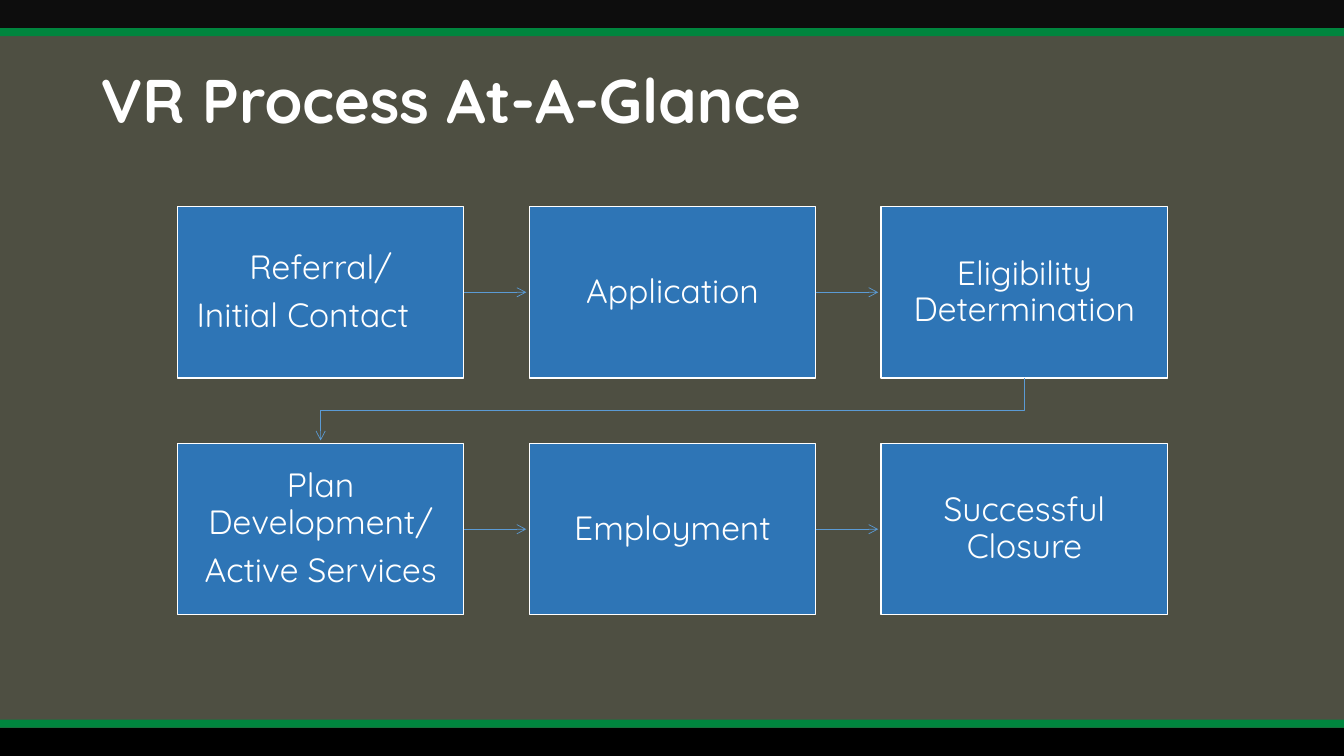
from pptx import Presentation
from pptx.dml.color import RGBColor
from pptx.enum.shapes import MSO_CONNECTOR, MSO_SHAPE
from pptx.enum.text import MSO_ANCHOR, PP_ALIGN
from pptx.oxml.ns import qn
from pptx.util import Inches, Pt
from lxml.etree import SubElement

FONT = "Quicksand"
OLIVE = RGBColor(0x4E, 0x4F, 0x42)
BLACK = RGBColor(0x00, 0x00, 0x00)
NEAR_BLACK = RGBColor(0x0D, 0x0D, 0x0D)
GREEN = RGBColor(0x00, 0x85, 0x3E)
BLUE = RGBColor(0x2E, 0x75, 0xB6)
LIGHT_BLUE = RGBColor(0x5B, 0x9B, 0xD5)
WHITE = RGBColor(0xFF, 0xFF, 0xFF)

WIDTH, HEIGHT = 13.33, 7.5
BAND, STRIPE = 0.28, 0.08

COLUMNS = 3
STEP_W, STEP_H = 2.84, 1.7
PITCH_X, PITCH_Y = 3.49, 2.35
ARROW_GAP = 0.03

STEPS = [
    ["Referral/", "Initial Contact\t"],
    ["Application"],
    ["Eligibility Determination"],
    ["Plan Development/", "Active Services"],
    ["Employment"],
    ["Successful Closure"],
]


def add_bar(slide, top, height, color):
    bar = slide.shapes.add_shape(
        MSO_SHAPE.RECTANGLE, 0, Inches(top), Inches(WIDTH), Inches(height))
    bar.shadow.inherit = False
    bar.fill.solid()
    bar.fill.fore_color.rgb = color
    bar.line.fill.background()


def add_frame(slide):
    """Dark bands with green stripes along the top and bottom edges."""
    add_bar(slide, HEIGHT - BAND, BAND, BLACK)
    add_bar(slide, HEIGHT - BAND - STRIPE, STRIPE, GREEN)
    add_bar(slide, 0, BAND, NEAR_BLACK)
    add_bar(slide, BAND, STRIPE, GREEN)


def add_title(slide, left, top, width, height):
    title = slide.shapes.add_textbox(
        Inches(left), Inches(top), Inches(width), Inches(height))
    frame = title.text_frame
    frame.word_wrap = True
    frame.vertical_anchor = MSO_ANCHOR.MIDDLE
    heading = frame.paragraphs[0]
    heading.text = "VR Process At-A-Glance"
    heading.line_spacing = 0.9
    heading.font.name = FONT
    heading.font.size = Pt(44)
    heading.font.bold = True
    heading.font.color.rgb = WHITE


def add_step(slide, left, top, lines):
    step = slide.shapes.add_shape(
        MSO_SHAPE.RECTANGLE, Inches(left), Inches(top), Inches(STEP_W), Inches(STEP_H))
    step.shadow.inherit = False
    step.fill.solid()
    step.fill.fore_color.rgb = BLUE
    step.line.color.rgb = WHITE
    step.line.width = Pt(1)
    frame = step.text_frame
    frame.word_wrap = True
    frame.vertical_anchor = MSO_ANCHOR.MIDDLE
    frame.margin_left = frame.margin_right = Inches(0.19)
    frame.margin_top = frame.margin_bottom = Inches(0.19)
    for index, line in enumerate(lines):
        paragraph = frame.add_paragraph() if index else frame.paragraphs[0]
        paragraph.text = line
        paragraph.alignment = PP_ALIGN.CENTER
        paragraph.line_spacing = 0.9
        paragraph.space_after = Pt(8.4)
        paragraph.font.name = FONT
        paragraph.font.size = Pt(24)
        paragraph.font.color.rgb = WHITE
    return step


def style_arrow(arrow):
    arrow.line.color.rgb = LIGHT_BLUE
    arrow.line.width = Pt(0.5)
    properties = arrow.element.spPr
    SubElement(properties.find(qn("a:ln")), qn("a:tailEnd"), type="arrow")


def add_arrow_across(slide, start, end):
    middle = start.top + start.height // 2
    arrow = slide.shapes.add_connector(
        MSO_CONNECTOR.STRAIGHT, start.left + start.width, middle,
        end.left - Inches(ARROW_GAP), middle)
    arrow.begin_connect(start, 3)
    style_arrow(arrow)
    SubElement(arrow.element.spPr, qn("a:effectLst"))


def add_arrow_to_next_row(slide, start, end):
    start_x = start.left + start.width // 2
    end_x = end.left + end.width // 2
    bottom = start.top + start.height
    turn = (bottom + end.top) // 2
    outline = slide.shapes.build_freeform(start_x, bottom)
    outline.add_line_segments(
        [(start_x, turn), (end_x, turn), (end_x, end.top - Inches(ARROW_GAP))],
        close=False)
    arrow = outline.convert_to_shape()
    arrow.shadow.inherit = False
    arrow.fill.background()
    style_arrow(arrow)


def add_process(slide, left, top):
    steps = []
    for index, lines in enumerate(STEPS):
        row, column = divmod(index, COLUMNS)
        steps.append(add_step(
            slide, left + column * PITCH_X, top + row * PITCH_Y, lines))
    for start, end in zip(steps, steps[1:]):
        if start.top == end.top:
            add_arrow_across(slide, start, end)
        else:
            add_arrow_to_next_row(slide, start, end)


def main():
    presentation = Presentation()
    presentation.slide_width = Inches(WIDTH)
    presentation.slide_height = Inches(HEIGHT)
    slide = presentation.slides.add_slide(presentation.slide_layouts[6])
    slide.background.fill.solid()
    slide.background.fill.fore_color.rgb = OLIVE
    add_frame(slide)
    add_title(slide, 0.9, 0.36, 11.6, 1.34)
    add_process(slide, 1.76, 2.05)
    presentation.save("out.pptx")


if __name__ == "__main__":
    main()
